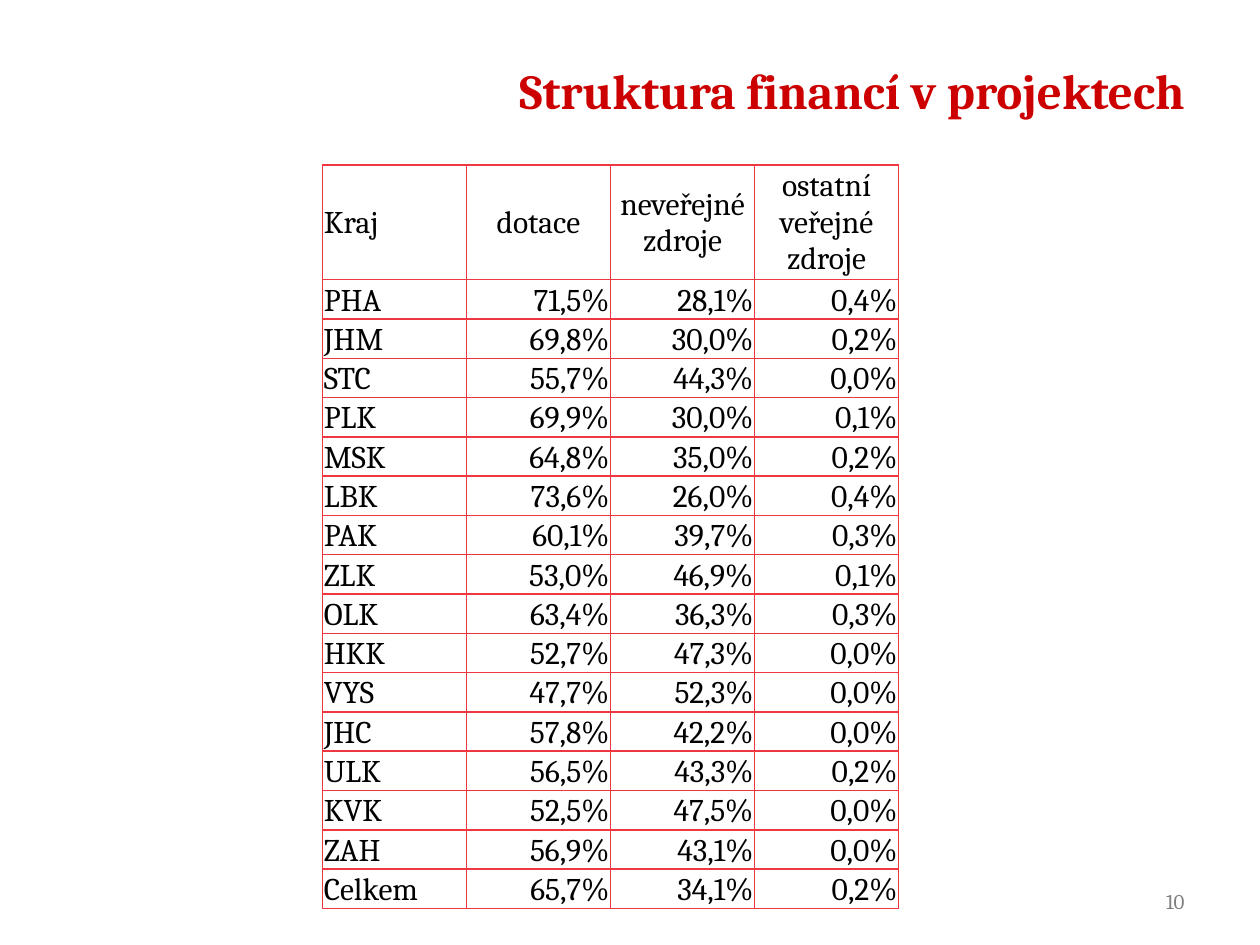
from lxml import etree
from pptx import Presentation
from pptx import util as u
from pptx.dml.color import RGBColor
from pptx.enum import text
from pptx.oxml.ns import qn

LEFT, CENTER, RIGHT = text.PP_ALIGN.LEFT, text.PP_ALIGN.CENTER, text.PP_ALIGN.RIGHT
MIDDLE, BOTTOM = text.MSO_ANCHOR.MIDDLE, text.MSO_ANCHOR.BOTTOM

HEADER = ["Kraj", "dotace", "neveřejné zdroje", "ostatní veřejné zdroje"]
REGIONS = [
    ("PHA", "71,5%", "28,1%", "0,4%"),
    ("JHM", "69,8%", "30,0%", "0,2%"),
    ("STC", "55,7%", "44,3%", "0,0%"),
    ("PLK", "69,9%", "30,0%", "0,1%"),
    ("MSK", "64,8%", "35,0%", "0,2%"),
    ("LBK", "73,6%", "26,0%", "0,4%"),
    ("PAK", "60,1%", "39,7%", "0,3%"),
    ("ZLK", "53,0%", "46,9%", "0,1%"),
    ("OLK", "63,4%", "36,3%", "0,3%"),
    ("HKK", "52,7%", "47,3%", "0,0%"),
    ("VYS", "47,7%", "52,3%", "0,0%"),
    ("JHC", "57,8%", "42,2%", "0,0%"),
    ("ULK", "56,5%", "43,3%", "0,2%"),
    ("KVK", "52,5%", "47,5%", "0,0%"),
    ("ZAH", "56,9%", "43,1%", "0,0%"),
    ("Celkem", "65,7%", "34,1%", "0,2%"),
]


def color(value):
    """Turn a hex string into a colour."""
    return RGBColor.from_string(value)


def write(tf, content, font="Cambria", size=18, fill="000000", bold=False, align=LEFT):
    """Write one formatted paragraph into a text frame."""
    p = tf.paragraphs[0]
    p.alignment = align
    r = p.add_run()
    r.text = content
    r.font.name, r.font.size, r.font.bold = font, u.Pt(size), bold
    r.font.color.rgb = color(fill)


class Deck:
    """Hold the style and current slide on a grid of 100 columns by 75 rows."""

    unit = u.Inches(0.1)
    border = "F03741"

    def __init__(self):
        """Open a presentation with one blank slide."""
        self.prs = Presentation()
        self.prs.slide_width, self.prs.slide_height = self.grid(100, 75)
        self.s = self.prs.slides.add_slide(self.prs.slide_layouts[6])

    def grid(self, *cells):
        """Convert grid lengths to slide units."""
        return [round(cell * self.unit) for cell in cells]

    def label(self, content, box, **style):
        """Add a vertically centred text box."""
        tf = self.s.shapes.add_textbox(*self.grid(*box)).text_frame
        tf.word_wrap = True
        tf.vertical_anchor = MIDDLE
        write(tf, content, **style)

    def outline(self, cell):
        """Draw the four borders of a cell and clear its fill."""
        tc_pr = cell._tc.get_or_add_tcPr()
        for side in ("lnL", "lnR", "lnT", "lnB"):
            ln = etree.SubElement(tc_pr, qn(f"a:{side}"), w=str(u.Pt(1)))
            fill = etree.SubElement(ln, qn("a:solidFill"))
            etree.SubElement(fill, qn("a:srgbClr"), val=self.border)
        cell.fill.background()

    def table(self, rows, left, top, col_width, heights):
        """Add an outlined table with a header row."""
        cols = len(rows[0])
        box = self.grid(left, top, col_width * cols, sum(heights))
        table = self.s.shapes.add_table(len(rows), cols, *box).table
        table.first_row = table.horz_banding = False
        for col in table.columns:
            col.width = self.grid(col_width)[0]
        for i, (values, height) in enumerate(zip(rows, heights)):
            table.rows[i].height = self.grid(height)[0]
            for j, value in enumerate(values):
                cell = table.cell(i, j)
                cell.margin_left = cell.margin_right = cell.margin_top = u.Inches(0.01)
                cell.margin_bottom = 0
                cell.vertical_anchor = BOTTOM if i else MIDDLE
                align = LEFT if j == 0 else RIGHT if i else CENTER
                write(cell.text_frame, value, align=align)
                self.outline(cell)


def main():
    """Build the slide."""
    deck = Deck()
    deck.label("Struktura financí v projektech", (14.6, 3.6, 80.4, 7.1),
               size=28, fill="CC0000", bold=True, align=RIGHT)
    deck.label("10", (71.7, 69.5, 23.3, 4), size=12, fill="7F7F7F", align=RIGHT)
    deck.table([HEADER, *REGIONS], 25.6, 13.1, 11.43, [9.1] + [3.12] * len(REGIONS))
    deck.prs.save("out.pptx")


if __name__ == "__main__":
    main()
